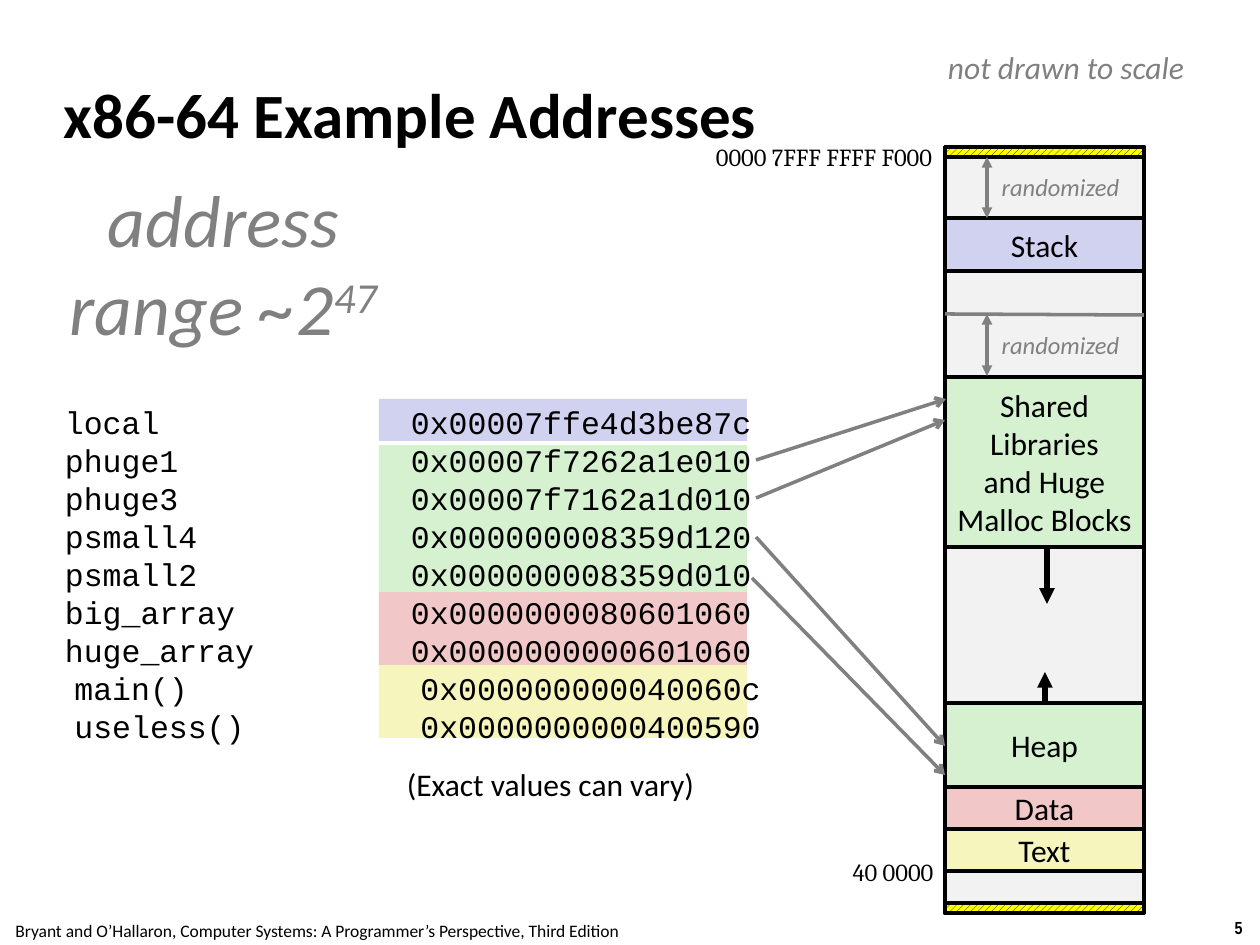
from lxml import etree
from pptx import Presentation
from pptx.dml.color import RGBColor
from pptx.enum.dml import MSO_PATTERN
from pptx.enum.shapes import MSO_CONNECTOR, MSO_SHAPE
from pptx.enum.text import MSO_ANCHOR, PP_ALIGN
from pptx.oxml.ns import qn
from pptx.util import Pt

PX = 914400 / 126
LEFT, CENTER, RIGHT = PP_ALIGN.LEFT, PP_ALIGN.CENTER, PP_ALIGN.RIGHT
MIDDLE = MSO_ANCHOR.MIDDLE
RECT, STRAIGHT = MSO_SHAPE.RECTANGLE, MSO_CONNECTOR.STRAIGHT
HATCH = MSO_PATTERN.WIDE_UPWARD_DIAGONAL
COLORS = {
    "black": "000000", "gray": "808080", "free": "F2F2F2", "stack": "D1D1F0",
    "heap": "D5F1CF", "data": "F1C7C7", "text": "F6F5BD", "guard": "FFFF00",
}
RGB = {name: RGBColor.from_string(value) for name, value in COLORS.items()}


def px(*lengths):
    return [round(n * PX) for n in lengths]


def write(sp, lines, size, align=CENTER, wrap=False, color="black", **font):
    """Fill a shape with one paragraph per line; font holds run attributes."""
    tf = sp.text_frame
    tf.word_wrap = wrap
    for i, line in enumerate(lines):
        p = tf.paragraphs[0] if i == 0 else tf.add_paragraph()
        p.alignment = align
        r = p.add_run()
        r.text = line
        for name, value in ({"name": "Calibri", "size": Pt(size)} | font).items():
            setattr(r.font, name, value)
        r.font.color.rgb = RGB[color]
    return tf


prs = Presentation()
prs.slide_width, prs.slide_height = px(1260, 945)
s = prs.slides.add_slide(prs.slide_layouts[5])
shapes = s.shapes

# Title
title = shapes.title
title.left, title.top, title.width, title.height = px(59, 73, 906, 80)
tf = write(title, ["x86-64 Example Addresses"], 36, LEFT, True, bold=True)
tf.vertical_anchor = MIDDLE
for side in ("left", "top", "right", "bottom"):
    setattr(tf, f"margin_{side}", px(5)[0])

# Colour bands behind the address list
for top, height, color in [(665, 73, "text"), (591, 74, "data"),
                           (399, 42, "stack"), (445, 147, "heap")]:
    sp = shapes.add_shape(RECT, *px(379, top, 368, height))
    sp.shadow.inherit = False
    sp.fill.solid()
    sp.fill.fore_color.rgb = RGB[color]
    sp.line.fill.background()

# Address list
addresses = [
    "local\t0x00007ffe4d3be87c ",
    "phuge1 \t0x00007f7262a1e010 ",
    "phuge3 \t0x00007f7162a1d010 ",
    "psmall4\t0x000000008359d120 ",
    "psmall2\t0x000000008359d010 ",
    "big_array \t0x0000000080601060 ",
    "huge_array \t0x0000000000601060 ",
    "main()\t0x000000000040060c",
    "useless() \t0x0000000000400590",
]
sp = shapes.add_textbox(*px(29, 397, 777, 355))
tf = write(sp, addresses, 18, wrap=True, name="Courier New")
for p in tf.paragraphs:
    p.line_spacing = Pt(21.7)
    tabs = etree.SubElement(p._p.get_or_add_pPr(), qn("a:tabLst"))
    etree.SubElement(tabs, qn("a:tab"), pos=str(px(346)[0]), algn="l")

# Address range, with its exponent
sp = shapes.add_textbox(*px(53, 168, 341, 192))
p = write(sp, ["address range ~2"], 42, wrap=True, color="gray", italic=True).paragraphs[0]
r = p.add_run()
r.text = "47"
r.font.name, r.font.size, r.font.italic = "Calibri", Pt(42), True
r.font.color.rgb = RGB["gray"]
r._r.get_or_add_rPr().set("baseline", "30000")

# Memory map: top, height, fill, label lines
sections = [
    (147, 766, "free", []),
    (218, 53, "stack", ["Stack"]),
    (377, 170, "heap", ["Shared", "Libraries", "and Huge", "Malloc Blocks"]),
    (703, 84, "heap", ["Heap"]),
    (787, 42, "data", ["Data"]),
    (829, 42, "text", ["Text"]),
    (147, 10, "guard", []),
    (903, 10, "guard", []),
]
for top, height, color, label in sections:
    sp = shapes.add_shape(RECT, *px(945, top, 199, height))
    sp.shadow.inherit = False
    if color == "guard":
        sp.fill.patterned()
        sp.fill.pattern = HATCH
        sp.fill.fore_color.rgb = RGB["black"]
        sp.fill.back_color.rgb = RGB[color]
    else:
        sp.fill.solid()
        sp.fill.fore_color.rgb = RGB[color]
    sp.line.color.rgb = RGB["black"]
    sp.line.width = Pt(2)
    write(sp, label, 18).vertical_anchor = MIDDLE

# Lines: ends, colour, width, arrowheads
lines = [
    ((756, 460, 946, 399), "gray", 2, {"tailEnd": "arrow"}),
    ((756, 498, 945, 420), "gray", 2, {"tailEnd": "arrow"}),
    ((756, 537, 945, 746), "gray", 2, {"tailEnd": "arrow"}),
    ((752, 578, 945, 775), "gray", 2, {"tailEnd": "arrow"}),
    ((945, 314, 1144, 315), "gray", 2, {}),
    ((1045, 703, 1045, 672), "black", 3, {"tailEnd": "triangle"}),
    ((1047, 547, 1047, 604), "black", 3, {"tailEnd": "triangle"}),
    ((987, 157, 987, 218), "gray", 2, {"headEnd": "triangle", "tailEnd": "triangle"}),
    ((987, 314, 987, 376), "gray", 2, {"headEnd": "triangle", "tailEnd": "triangle"}),
]
for ends, color, width, heads in lines:
    cxn = shapes.add_connector(STRAIGHT, *px(*ends))
    cxn.line.color.rgb = RGB[color]
    cxn.line.width = Pt(width)
    for end, kind in heads.items():
        etree.SubElement(cxn.line._get_or_add_ln(), qn(f"a:{end}"), type=kind)
    etree.SubElement(cxn._element.spPr, qn("a:effectLst"))

# Captions and footer
gray = {"color": "gray", "italic": True}
captions = [
    ("not drawn to scale", (932, 42, 268, 50), 18, gray),
    ("(Exact values can vary)", (389, 759, 323, 50), 18, {}),
    ("randomized", (987, 166, 147, 43), 14, gray),
    ("randomized", (987, 324, 147, 43), 14, gray),
    ("0000 7FFF FFFF F000", (514, 136, 431, 43), 14,
     {"align": RIGHT, "wrap": True, "name": "Cambria"}),
    ("40 0000", (820, 851, 126, 43), 14,
     {"align": RIGHT, "wrap": True, "name": "Cambria"}),
    ("5", (1217, 911, 43, 34), 10, {"name": "Arial Narrow", "bold": True}),
    ("Bryant and O’Hallaron, Computer Systems: A Programmer’s Perspective, Third Edition",
     (-3, 914, 640, 34), 10, {}),
]
for text, box, size, style in captions:
    write(shapes.add_textbox(*px(*box)), [text], size, **style)

prs.save("out.pptx")
